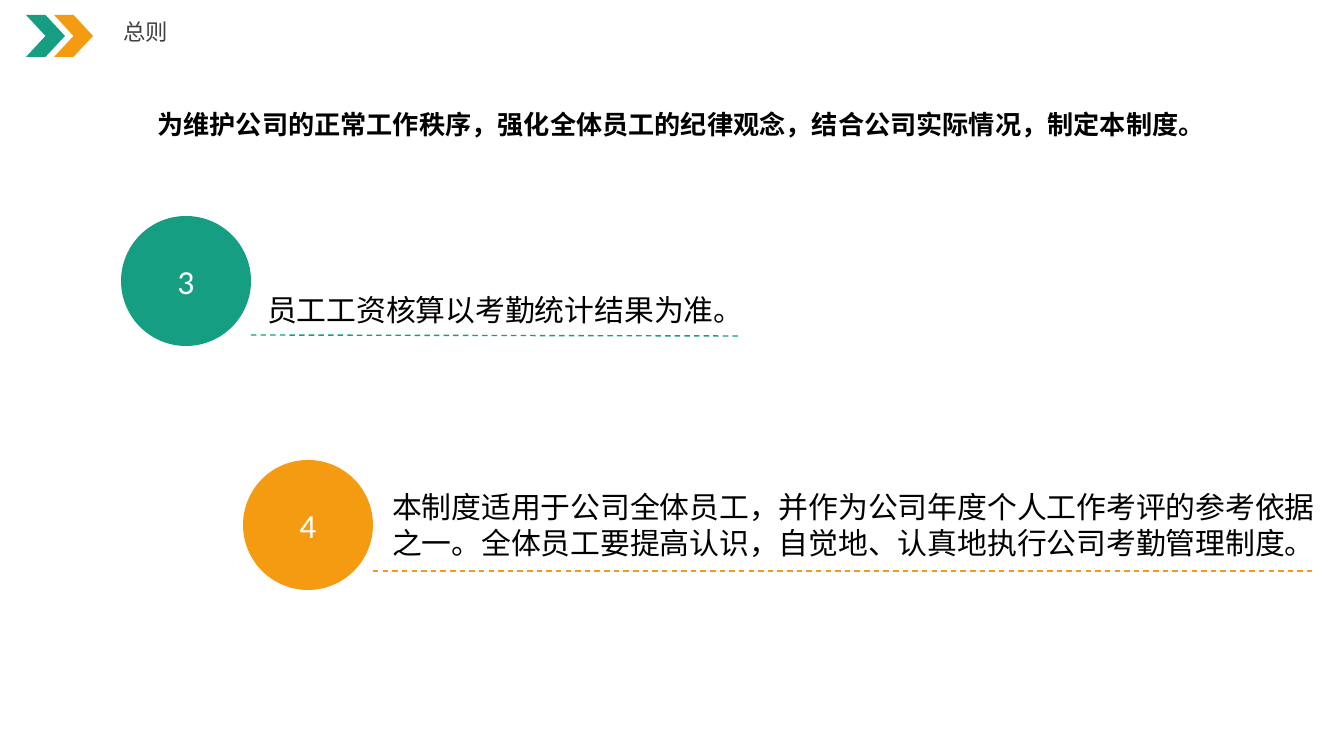
"""Build the general rules slide of an attendance policy."""
from lxml import etree
from pptx import Presentation
from pptx import util as u
from pptx.dml.color import RGBColor
from pptx.enum import dml, shapes, text
from pptx.oxml.ns import qn

PX = 914400 / 134.4
GREEN = RGBColor(0x16, 0x9E, 0x82)
ORANGE = RGBColor(0xF5, 0x9B, 0x11)
GREY = RGBColor(0x40, 0x40, 0x40)
BLACK = RGBColor(0, 0, 0)
WHITE = RGBColor(255, 255, 255)
HAN = "Noto Sans CJK SC"
LATIN = "Calibri"


def px(*nums):
    """Turn pixel lengths into EMU."""
    return [u.Emu(round(n * PX)) for n in nums]


def add_run(para, words, size, color, face=HAN, bold=False):
    """Add one styled run to a paragraph."""
    run = para.add_run()
    run.text = words
    font = run.font
    font.size, font.bold, font.name = u.Pt(size), bold, face
    font.color.rgb = color
    etree.SubElement(run._r.get_or_add_rPr(), qn("a:ea"), typeface=face)


def add_shape(slide, kind, box, color):
    """Add a flat filled shape without outline."""
    shape = slide.shapes.add_shape(kind, *px(*box))
    shape.shadow.inherit = False
    shape.fill.solid()
    shape.fill.fore_color.rgb = color
    shape.line.fill.background()
    return shape


def add_text(slide, box, words, size, color=BLACK, wrap=True, bold=False):
    """Add a text box and return its frame."""
    frame = slide.shapes.add_textbox(*px(*box)).text_frame
    frame.word_wrap = wrap
    frame.auto_size = text.MSO_AUTO_SIZE.SHAPE_TO_FIT_TEXT
    add_run(frame.paragraphs[0], words, size, color, bold=bold)
    return frame


def add_title(slide, words):
    """Add the two chevrons and the section title."""
    for left, color in ((26, GREEN), (54, ORANGE)):
        add_shape(slide, shapes.MSO_SHAPE.CHEVRON, (left, 15, 39, 42), color)
    frame = add_text(slide, (114, 13, 66, 38), words, 12, GREY, wrap=False)
    frame.margin_left = frame.margin_right = u.Inches(0.07)
    frame.margin_top = frame.margin_bottom = u.Inches(0.04)


def add_intro(slide, words):
    """Add the bold indented opening sentence."""
    frame = add_text(slide, (77, 102, 1159, 46), words, 14, bold=True)
    para = frame.paragraphs[0]
    para.alignment = text.PP_ALIGN.JUSTIFY
    props = para._p.get_or_add_pPr()
    props.set("marL", str(u.Inches(0.5)))
    props.set("indent", "0")


def add_badge(slide, left, top, mark, color):
    """Add a numbered circle."""
    disc = add_shape(slide, shapes.MSO_SHAPE.OVAL, (left, top, 130, 130), color)
    frame = disc.text_frame
    frame.vertical_anchor = text.MSO_ANCHOR.MIDDLE
    para = frame.paragraphs[0]
    para.alignment = text.PP_ALIGN.CENTER
    add_run(para, mark, 18, WHITE, LATIN)


def add_rule(slide, start, end, color):
    """Add a thin dashed line."""
    line = slide.shapes.add_connector(
        shapes.MSO_CONNECTOR.STRAIGHT, *px(*start, *end))
    line.line.color.rgb = color
    line.line.width = u.Pt(0.75)
    line.line.dash_style = dml.MSO_LINE.DASH
    etree.SubElement(line._element.spPr, qn("a:effectLst"))


def main():
    """Build and save the slide."""
    deck = Presentation()
    deck.slide_width, deck.slide_height = px(1344, 756)
    slide = deck.slides.add_slide(deck.slide_layouts[6])
    add_title(slide, "总则")
    add_intro(slide, "为维护公司的正常工作秩序，强化全体员工的纪律观念，"
                     "结合公司实际情况，制定本制度。")
    add_badge(slide, 121, 216, "3", GREEN)
    add_text(slide, (254, 285, 509, 50),
             "员工工资核算以考勤统计结果为准。", 16, wrap=False)
    add_rule(slide, (251, 335), (742, 336), GREEN)
    add_badge(slide, 243, 460, "4", ORANGE)
    add_text(slide, (379, 482, 966, 86),
             "本制度适用于公司全体员工，并作为公司年度个人工作考评的参考依据之一。"
             "全体员工要提高认识，自觉地、认真地执行公司考勤管理制度。", 16)
    add_rule(slide, (373, 571), (1312, 571), ORANGE)
    deck.save("out.pptx")


if __name__ == "__main__":
    main()
